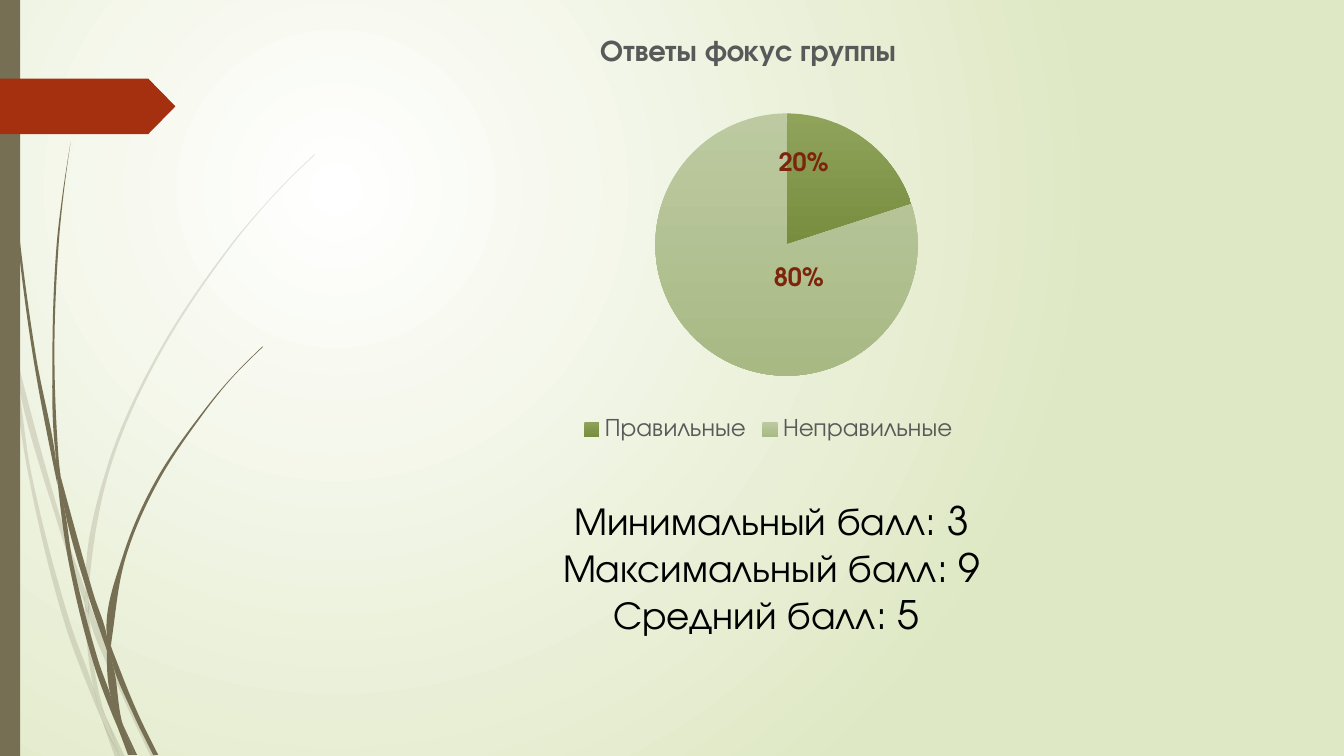
import pptx
import pptx.util
import pptx.chart.data
import pptx.dml.color
import pptx.enum.chart
import pptx.enum.shapes
import pptx.enum.text
import pptx.oxml
import pptx.oxml.ns

Inches = pptx.util.Inches
qn = pptx.oxml.ns.qn
nsdecls = pptx.oxml.ns.nsdecls

FONT = "TeX Gyre Adventor"
COLORS = {
    "white": "FFFFFF", "meadow": "DFE8C4", "stem": "766F54", "arrow": "A53010",
    "gray": "595959", "label": "7C240C", "black": "000000",
}
TITLE = "Ответы фокус группы"
ANSWERS = [
    {"name": "Правильные", "value": 0.2, "stops": ("8FA35B", "798D3F"), "shift": (-0.09, 0.1)},
    {"name": "Неправильные ", "value": 0.8, "stops": ("BDCAA1", "A8B984"), "shift": (0.12, -0.21)},
]
SCORES = ["Минимальный балл: 3", "Максимальный балл: 9", "Средний балл: 5 "]

PALE_BLADES = [
    ([(0, 2.99), (0.1, 3.44), (0.11, 3.5)], [(0, 2.82), (0.09, 3.22), (0.11, 3.5)]),
    ([(0.14, 3.45), (0.17, 3.76), (0.58, 5.22), (0.84, 5.99)],
     [(0.14, 3.45), (0.62, 5.2), (0.85, 5.86)]),
    ([(0.88, 5.96), (0.88, 6.1), (1.23, 6.94), (1.5, 7.51)],
     [(0.88, 5.96), (0.92, 6.07), (1.27, 6.92), (1.55, 7.51)]),
    ([(1.05, 7.11), (1.19, 7.51)], [(1.05, 7.11), (1.24, 7.51)]),
    ([(0.11, 3.5), (0.28, 4.7), (0.65, 6.21), (0.92, 6.93), (1.01, 7.14)],
     [(0.11, 3.5), (0.17, 3.76), (0.31, 4.69), (0.7, 6.19), (0.93, 6.83), (0.99, 7.07), (1.01, 7.14)]),
    ([(0.84, 5.99), (0.87, 6.46), (0.93, 6.83), (0.96, 6.92), (1.05, 7.11)],
     [(0.84, 5.99), (0.88, 6.1), (0.91, 6.46), (1.03, 7.06), (1.05, 7.11)]),
    ([(3.12, 1.53), (2.89, 1.75), (2.68, 1.97), (2.28, 2.44), (1.58, 3.48), (1.07, 4.61),
      (0.85, 5.84), (0.88, 5.96)],
     [(3.12, 1.54), (2.9, 1.75), (2.68, 1.98), (2.29, 2.45), (1.6, 3.49), (1.1, 4.62),
      (0.88, 5.84), (0.88, 5.96)]),
    ([(1.01, 7.14), (1.14, 7.51)], [(1.01, 7.14), (1.19, 7.51)]),
    ([(0.85, 5.86), (0.84, 5.99), (0.88, 6.1)], [(0.85, 5.86), (0.88, 5.96), (0.88, 6.1)]),
    ([(0.93, 6.83), (0.99, 7.07), (1.01, 7.14), (1.19, 7.51)],
     [(0.93, 6.83), (0.96, 6.92), (1.05, 7.11), (1.19, 7.51)]),
]
DARK_BLADES = [
    ([(0.03, 0), (0.04, 0.48), (0.07, 1.1), (0.17, 2.33), (0.33, 3.55), (0.57, 4.81)],
     [(0.04, 0), (0.05, 0.48), (0.08, 1.09), (0.19, 2.32), (0.36, 3.55), (0.55, 4.53), (0.57, 4.81)]),
    ([(0.6, 4.72), (0.64, 5.05), (0.88, 5.92), (1.06, 6.45)],
     [(0.6, 4.72), (0.93, 5.9), (1.06, 6.31), (1.06, 6.45)]),
    ([(1.1, 6.41), (1.11, 6.56), (1.32, 7.08), (1.52, 7.49)],
     [(1.1, 6.41), (1.13, 6.49), (1.36, 7.06), (1.57, 7.49)]),
    ([(0.57, 4.77), (0.68, 5.57), (0.93, 6.59), (1.11, 7.08), (1.17, 7.22)],
     [(0.57, 4.77), (0.64, 5.05), (0.72, 5.56), (0.98, 6.57), (1.1, 6.91), (1.17, 7.22)]),
    ([(0.7, 1.41), (0.62, 1.93), (0.56, 2.45), (0.52, 3.49), (0.55, 4.49), (0.6, 4.72)],
     [(0.7, 1.41), (0.63, 1.93), (0.58, 2.45), (0.54, 3.49), (0.58, 4.53), (0.6, 4.72)]),
    ([(1.22, 7.19), (1.33, 7.49)], [(1.22, 7.19), (1.36, 7.49)]),
    ([(0.55, 4.49), (0.57, 4.77), (0.64, 5.05)], [(0.55, 4.49), (0.6, 4.72), (0.64, 5.05)]),
    ([(2.6, 3.44), (2.31, 3.73), (2.04, 4.05), (1.56, 4.74), (1.22, 5.51), (1.06, 6.31), (1.1, 6.41)],
     [(2.61, 3.44), (2.31, 3.74), (2.05, 4.06), (1.58, 4.76), (1.25, 5.52), (1.11, 6.33), (1.1, 6.41)]),
    ([(1.17, 7.22), (1.27, 7.49)], [(1.17, 7.22), (1.31, 7.49)]),
    ([(1.06, 6.45), (1.1, 6.91), (1.22, 7.19)],
     [(1.06, 6.45), (1.11, 6.56), (1.21, 7.16), (1.22, 7.19)]),
    ([(1.06, 6.31), (1.06, 6.45), (1.11, 6.56)], [(1.06, 6.31), (1.1, 6.41), (1.11, 6.56)]),
    ([(1.1, 6.91), (1.17, 7.22), (1.3, 7.49)], [(1.1, 6.91), (1.22, 7.19), (1.33, 7.49)]),
]


def rgb(value):
    return pptx.dml.color.RGBColor.from_string(value)


def format_font(font, size, color, bold=False):
    font.name, font.size, font.bold = FONT, pptx.util.Pt(size), bold
    font.color.rgb = rgb(color)


def add_text(p, text, size=18, color=COLORS["black"], bold=False, align=None):
    r = p.add_run()
    r.text = text
    p.alignment = align
    format_font(r.font, size, color, bold)


def paint(s, color, alpha=100):
    s.shadow.inherit = False
    s.fill.solid()
    s.fill.fore_color.rgb = rgb(color)
    s.line.fill.background()
    if alpha < 100:
        clr = s.fill._xPr.find(".//" + qn("a:srgbClr"))
        clr.append(pptx.oxml.parse_xml(f'<a:alpha {nsdecls("a")} val="{alpha * 1000}"/>'))


def paint_gradient(fill, stops, angle=None):
    fill.gradient()
    for stop, color, position in zip(fill.gradient_stops, stops, (0, 1)):
        stop.color.rgb = rgb(color)
        stop.position = position
    if angle is not None:
        fill.gradient_angle = angle


def edge_curves(knots):
    secants = [(xb - xa) / (yb - ya) for (xa, ya), (xb, yb) in zip(knots, knots[1:])]
    slopes = [(a + b) / 2 for a, b in zip(secants, secants[1:])]
    if slopes:
        slopes = [1.5 * secants[0] - slopes[0] / 2, *slopes, 1.5 * secants[-1] - slopes[-1] / 2]
    else:
        slopes = secants * 2
    curves = []
    for i, ((xa, ya), (xb, yb)) in enumerate(zip(knots, knots[1:])):
        h = (yb - ya) / 3
        curves.append([(xa + slopes[i] * h, ya + h), (xb - slopes[i + 1] * h, yb - h), (xb, yb)])
    return curves


def add_blade(slide, left, right, alpha):
    outline = left + right[::-1]
    points = [(Inches(x), Inches(y)) for x, y in outline]
    builder = slide.shapes.build_freeform(*points[0])
    builder.add_line_segments(points[1:], close=True)
    s = builder.convert_to_shape()
    curves = edge_curves(left) + [None] + edge_curves(right[::-1])
    for line, curve in zip(list(s._element.iter(qn("a:lnTo"))), curves):
        if curve:
            pts = "".join(f'<a:pt x="{Inches(x) - s.left}" y="{Inches(y) - s.top}"/>' for x, y in curve)
            line.getparent().replace(line, pptx.oxml.parse_xml(
                f'<a:cubicBezTo {nsdecls("a")}>{pts}</a:cubicBezTo>'))
    paint(s, COLORS["stem"], alpha)


def manual_layout(x, y, w=None, h=None, edge=False):
    inner = '<c:layoutTarget val="inner"/>' if w else ""
    modes = '<c:xMode val="edge"/><c:yMode val="edge"/>' if edge else ""
    size = f'<c:w val="{w}"/><c:h val="{h}"/>' if w else ""
    return pptx.oxml.parse_xml(
        f'<c:layout {nsdecls("c")}><c:manualLayout>{inner}{modes}'
        f'<c:x val="{x}"/><c:y val="{y}"/>{size}</c:manualLayout></c:layout>')


def replace_layout(parent, layout, index):
    for old in parent.findall(qn("c:layout")):
        parent.remove(old)
    parent.insert(index, layout)


def add_answers_chart(slide):
    data = pptx.chart.data.CategoryChartData(number_format="0%")
    data.categories = [a["name"] for a in ANSWERS]
    data.add_series(TITLE, [a["value"] for a in ANSWERS])
    chart = slide.shapes.add_chart(
        pptx.enum.chart.XL_CHART_TYPE.PIE,
        Inches(2.78), Inches(0.3), Inches(9.75), Inches(4.13), data).chart
    format_font(chart.font, 10, COLORS["black"])
    chart.has_title = True
    add_text(chart.chart_title.text_frame.paragraphs[0], TITLE,
             size=21.3, color=COLORS["gray"], bold=True)
    replace_layout(chart.chart_title._element, manual_layout(0.32, 0, edge=True), 1)
    chart.has_legend = True
    chart.legend.position = pptx.enum.chart.XL_LEGEND_POSITION.BOTTOM
    chart.legend.include_in_layout = False
    format_font(chart.legend.font, 18, COLORS["gray"])

    plot = chart.plots[0]
    plot.vary_by_categories = True
    replace_layout(plot._element.getparent(), manual_layout(0.09, 0.2, 0.85, 0.63, edge=True), 0)
    for i, answer in enumerate(ANSWERS):
        point = plot.series[0].points[i]
        paint_gradient(point.format.fill, answer["stops"], 270)
        point.format.line.fill.background()
        label = point.data_label
        format_font(label.font, 18, COLORS["label"], bold=True)
        label.position = pptx.enum.chart.XL_LABEL_POSITION.OUTSIDE_END
        replace_layout(label._dLbl, manual_layout(*answer["shift"]), 1)
    for leader in plot._element.iter(qn("c:showLeaderLines")):
        leader.set("val", "0")


def main():
    prs = pptx.Presentation()
    prs.slide_width, prs.slide_height = Inches(13.33), Inches(7.5)
    slide = prs.slides.add_slide(prs.slide_layouts[6])
    paint_gradient(slide.background.fill, (COLORS["white"], COLORS["meadow"]))
    grad = slide._element.find(".//" + qn("a:gradFill"))
    grad.replace(grad.find(qn("a:lin")), pptx.oxml.parse_xml(
        f'<a:path {nsdecls("a")} path="circle">'
        '<a:fillToRect l="50000" t="50000" r="100000" b="100000"/></a:path>'))

    for blades, alpha in ((PALE_BLADES, 20), (DARK_BLADES, 100)):
        for left, right in blades:
            add_blade(slide, left, right, alpha)
    shapes = pptx.enum.shapes.MSO_SHAPE
    bar = slide.shapes.add_shape(shapes.RECTANGLE, 0, 0, Inches(0.2), prs.slide_height)
    paint(bar, COLORS["stem"])
    arrow = slide.shapes.add_shape(shapes.PENTAGON, 0, Inches(0.78), Inches(1.74), Inches(0.55))
    arrow.adjustments[0] = 0.49
    paint(arrow, COLORS["arrow"])

    add_answers_chart(slide)
    tf = slide.shapes.add_textbox(Inches(5.14), Inches(4.87), Inches(5.03), Inches(1.51)).text_frame
    tf.word_wrap = True
    for i, score in enumerate(SCORES):
        p = tf.add_paragraph() if i else tf.paragraphs[0]
        add_text(p, score, size=28, align=pptx.enum.text.PP_ALIGN.CENTER)
    prs.save("out.pptx")


if __name__ == "__main__":
    main()
